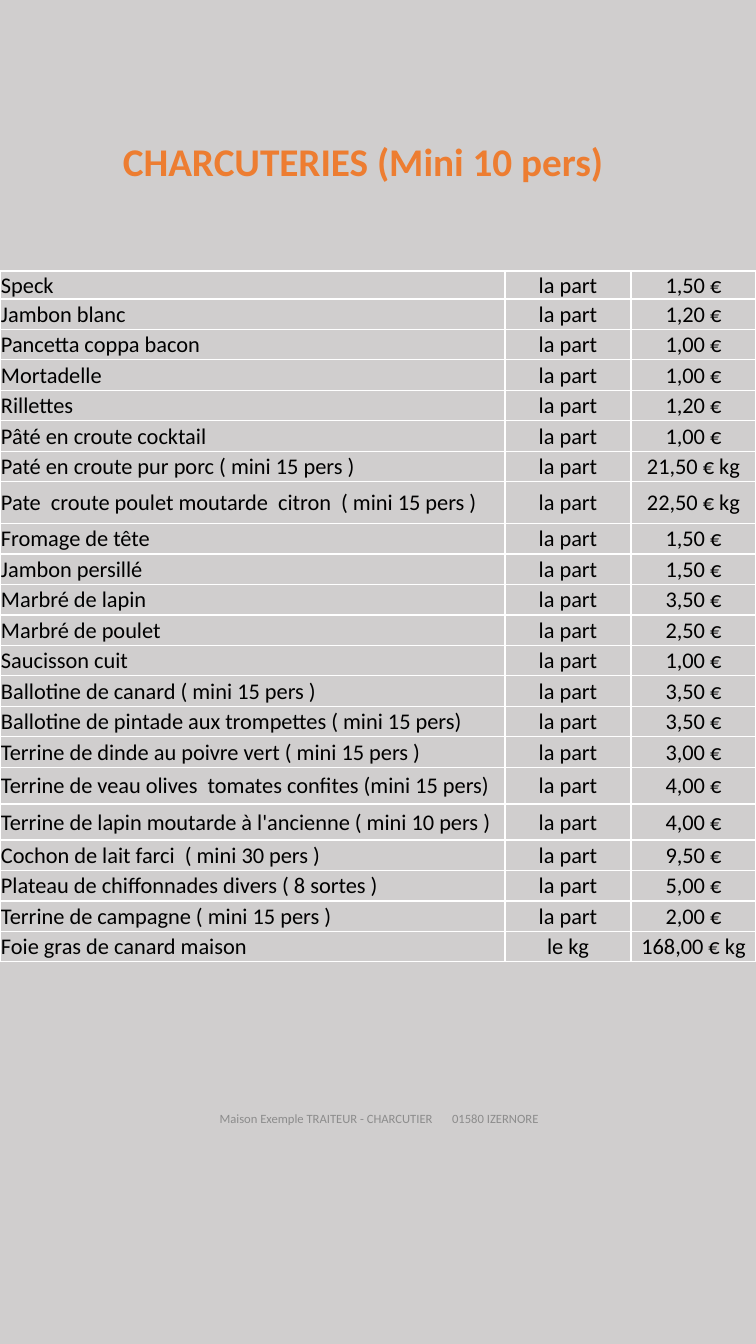
from lxml import etree
from pptx import Presentation
from pptx.dml.color import RGBColor
from pptx.enum.text import MSO_ANCHOR, PP_ALIGN
from pptx.oxml.ns import qn
from pptx.util import Pt

PX = 914400 / 100.8
LEFT, CENTER = PP_ALIGN.LEFT, PP_ALIGN.CENTER
TOP, MIDDLE = MSO_ANCHOR.TOP, MSO_ANCHOR.MIDDLE
COLORS = {"paper": "D0CECE", "title": "ED7D31", "footer": "8C8C8C",
          "text": "000000", "border": "FFFFFF"}


def px(n):
    return round(n * PX)


def add_text(p, text, size=16, color="text", bold=False, align=LEFT):
    p.alignment = align
    r = p.add_run()
    r.text = text
    r.font.name = "Calibri"
    r.font.size = Pt(size)
    r.font.bold = bold
    r.font.color.rgb = RGBColor.from_string(COLORS[color])
    return r


prs = Presentation()
prs.slide_width, prs.slide_height = px(756), px(1344)
s = prs.slides.add_slide(prs.slide_layouts[6])
s.background.fill.solid()
s.background.fill.fore_color.rgb = RGBColor.from_string(COLORS["paper"])

boxes = []
for box, anchor in [((203, 1083, 352, 72), MIDDLE), ((113, 132, 529, 57), TOP)]:
    tf = s.shapes.add_textbox(*map(px, box)).text_frame
    tf.word_wrap = True
    tf.vertical_anchor = anchor
    boxes.append(tf.paragraphs[0])
footer, title = boxes

footer_style = {"size": 9, "color": "footer", "align": CENTER}
add_text(footer, "Maison Exemple TRAITEUR - CHARCUTIER", **footer_style)
gap = add_text(footer, " ", **footer_style)
gap.font._element.set("spc", "1200")
add_text(footer, "01580 IZERNORE", **footer_style)
add_text(title, "CHARCUTERIES (Mini 10 pers)", size=28, color="title", bold=True)

products = [
    ("Speck", "la part", "1,50 €"),
    ("Jambon blanc", "la part", "1,20 €"),
    ("Pancetta coppa bacon", "la part", "1,00 €"),
    ("Mortadelle", "la part", "1,00 €"),
    ("Rillettes", "la part", "1,20 €"),
    ("Pâté en croute cocktail", "la part", "1,00 €"),
    ("Paté en croute pur porc ( mini 15 pers )", "la part", "21,50 € kg"),
    ("Pate  croute poulet moutarde  citron  ( mini 15 pers )", "la part", "22,50 € kg"),
    ("Fromage de tête", "la part", "1,50 €"),
    ("Jambon persillé", "la part", "1,50 €"),
    ("Marbré de lapin", "la part", "3,50 €"),
    ("Marbré de poulet", "la part", "2,50 €"),
    ("Saucisson cuit", "la part", "1,00 €"),
    ("Ballotine de canard ( mini 15 pers )", "la part", "3,50 €"),
    ("Ballotine de pintade aux trompettes ( mini 15 pers)", "la part", "3,50 €"),
    ("Terrine de dinde au poivre vert ( mini 15 pers )", "la part", "3,00 €"),
    ("Terrine de veau olives  tomates confites (mini 15 pers)", "la part", "4,00 €"),
    ("Terrine de lapin moutarde à l'ancienne ( mini 10 pers )", "la part", "4,00 €"),
    ("Cochon de lait farci  ( mini 30 pers )", "la part", "9,50 €"),
    ("Plateau de chiffonnades divers ( 8 sortes )", "la part", "5,00 €"),
    ("Terrine de campagne ( mini 15 pers )", "la part", "2,00 €"),
    ("Foie gras de canard maison", "le kg", "168,00 € kg"),
]
col_widths = [505, 126, 125]
table_height = 691
special_heights = {0: 28, 7: 42, 16: 37, 17: 36}
row_height = (table_height - sum(special_heights.values())) / (len(products) - len(special_heights))

table = s.shapes.add_table(len(products), len(col_widths), 0, px(271),
                           px(sum(col_widths)), px(table_height)).table
table.first_row = table.horz_banding = False
for col, width in zip(table.columns, col_widths):
    col.width = px(width)

for i, product in enumerate(products):
    table.rows[i].height = px(special_heights.get(i, row_height))
    for j, text in enumerate(product):
        cell = table.cell(i, j)
        cell.margin_left = cell.margin_right = cell.margin_top = px(1)
        cell.margin_bottom = 0
        cell.vertical_anchor = MIDDLE
        tcPr = cell._tc.get_or_add_tcPr()
        for side in ("a:lnL", "a:lnR", "a:lnT", "a:lnB"):
            ln = etree.SubElement(tcPr, qn(side), w=str(Pt(1)))
            fill = etree.SubElement(ln, qn("a:solidFill"))
            etree.SubElement(fill, qn("a:srgbClr"), val=COLORS["border"])
        cell.fill.solid()
        cell.fill.fore_color.rgb = RGBColor.from_string(COLORS["paper"])
        add_text(cell.text_frame.paragraphs[0], text, align=CENTER if j else LEFT)

prs.save("out.pptx")
